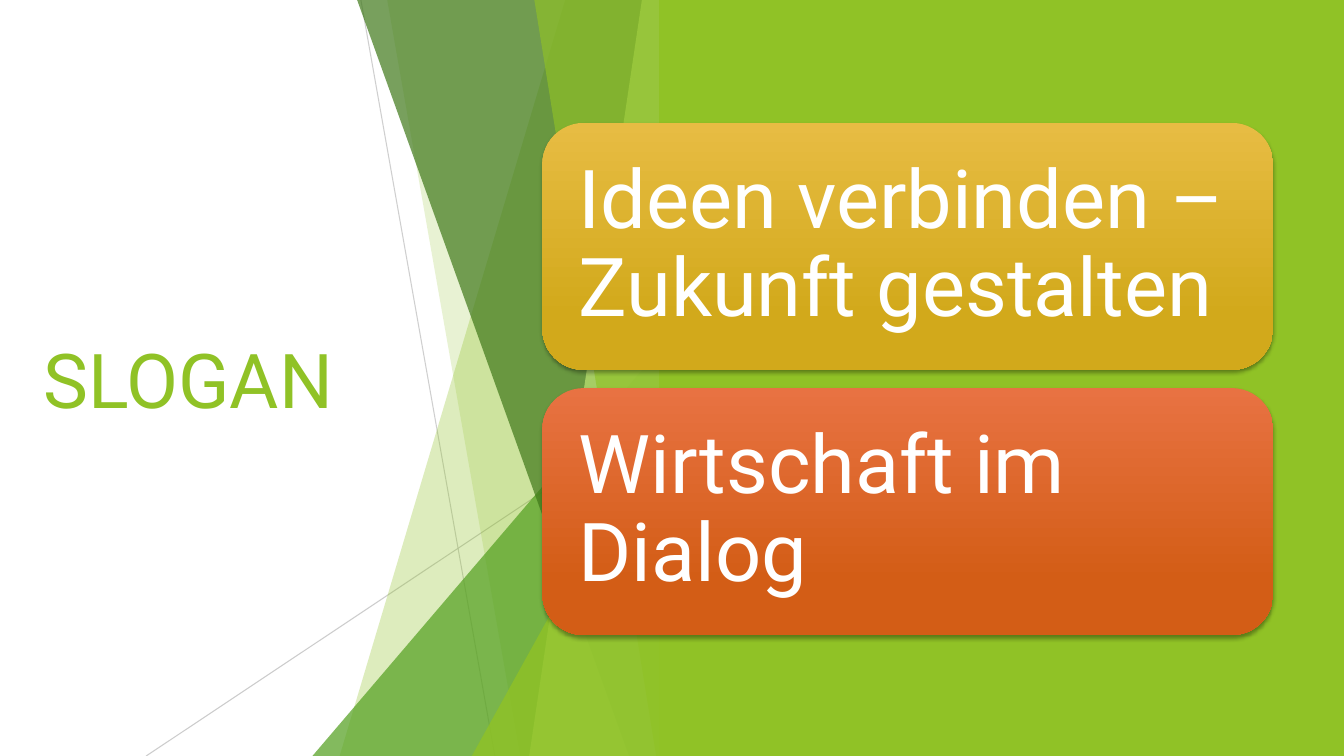
from dataclasses import dataclass

from lxml.etree import SubElement
from pptx import Presentation
from pptx.dml.color import RGBColor
from pptx.enum.shapes import MSO_CONNECTOR, MSO_SHAPE
from pptx.enum.text import MSO_ANCHOR, PP_ALIGN
from pptx.oxml.ns import qn
from pptx.slide import Slide
from pptx.text.text import TextFrame
from pptx.util import Pt


@dataclass(frozen=True)
class Theme:
    font: str = "Roboto"
    title_size: float = 54
    card_size: float = 58
    white: str = "FFFFFF"
    lime: str = "90C226"
    pale_lime: str = "C0E474"
    green: str = "54A021"
    forest: str = "3F7819"
    hairline: str = "BFBFBF"
    shadow: str = "000000"
    gold: tuple[str, str] = ("E7BC43", "D2A91B")
    orange: tuple[str, str] = ("E87242", "D35D16")


@dataclass(frozen=True)
class Ray:
    start: tuple[float, float]
    end: tuple[float, float]
    opacity: int


@dataclass(frozen=True)
class Facet:
    top_left: float
    bottom_left: float
    color: str
    opacity: int


@dataclass(frozen=True)
class Wedge:
    left: float
    top: float
    color: str
    opacity: int


@dataclass(frozen=True)
class Card:
    text: str
    gradient: tuple[str, str]


THEME = Theme()
PAGE_WIDTH, PAGE_HEIGHT = 960, 540
FACET_TOP, FACET_RIGHT = -0.6, 479.5
PANEL_LEFT = 470.9
CARD_LEFT, CARD_TOP, CARD_WIDTH, CARD_HEIGHT, CARD_GAP = 387.4, 87.8, 522, 176.4, 13
CARD_INSET = 17.28

RAYS = [
    Ray((257.8, 0), (353.5, 540), 75),
    Ray((479.5, 290.2), (104.4, 540), 80),
]
FACETS = [
    Facet(403.9, 242.6, THEME.lime, 30),
    Facet(276.5, 371.5, THEME.lime, 20),
    Wedge(223.2, 239.8, THEME.green, 72),
    Facet(254.9, 449.3, THEME.forest, 70),
    Facet(458.6, 378, THEME.pale_lime, 70),
    Facet(381.6, 468.7, THEME.lime, 65),
    Wedge(337, 283, THEME.lime, 80),
]
CARDS = [
    Card("Ideen verbinden – Zukunft gestalten", THEME.gold),
    Card("Wirtschaft im Dialog", THEME.orange),
]


def set_opacity(properties, percent: int) -> None:
    color = next(properties.iter(qn("a:srgbClr")))
    SubElement(color, qn("a:alpha"), val=str(percent * 1000))


def paint(shape, color: str, opacity: int = 100) -> None:
    shape.shadow.inherit = False
    shape.line.fill.background()
    shape.fill.solid()
    shape.fill.fore_color.rgb = RGBColor.from_string(color)
    if opacity < 100:
        set_opacity(shape.fill._xPr, opacity)


def write(frame: TextFrame, text: str, size: float, color: str, spacing: float = 1.0) -> None:
    frame.word_wrap = True
    frame.vertical_anchor = MSO_ANCHOR.MIDDLE
    para = frame.paragraphs[0]
    para.alignment = PP_ALIGN.LEFT
    para.line_spacing = spacing
    span = para.add_run()
    span.text = text
    span.font.name = THEME.font
    span.font.size = Pt(size)
    span.font.color.rgb = RGBColor.from_string(color)


def draw_ray(page: Slide, ray: Ray) -> None:
    points = [Pt(value) for value in (*ray.start, *ray.end)]
    line = page.shapes.add_connector(MSO_CONNECTOR.STRAIGHT, *points)
    line.line.width = Pt(0.75)
    line.line.color.rgb = RGBColor.from_string(THEME.hairline)
    properties = line._element.spPr
    set_opacity(properties, ray.opacity)
    SubElement(properties, qn("a:effectLst"))


def draw_facet(page: Slide, facet: Facet) -> None:
    builder = page.shapes.build_freeform(Pt(facet.top_left), Pt(FACET_TOP))
    corners = [
        (FACET_RIGHT, FACET_TOP),
        (FACET_RIGHT, PAGE_HEIGHT),
        (facet.bottom_left, PAGE_HEIGHT),
    ]
    builder.add_line_segments([(Pt(x), Pt(y)) for x, y in corners], close=True)
    paint(builder.convert_to_shape(), facet.color, facet.opacity)


def draw_wedge(page: Slide, wedge: Wedge) -> None:
    triangle = page.shapes.add_shape(
        MSO_SHAPE.ISOSCELES_TRIANGLE,
        Pt(wedge.left),
        Pt(wedge.top),
        Pt(FACET_RIGHT - wedge.left),
        Pt(PAGE_HEIGHT - wedge.top),
    )
    triangle.adjustments[0] = 1
    paint(triangle, wedge.color, wedge.opacity)


def draw_panel(page: Slide) -> None:
    panel = page.shapes.add_shape(
        MSO_SHAPE.RECTANGLE, Pt(PANEL_LEFT), 0, Pt(PAGE_WIDTH - PANEL_LEFT), Pt(PAGE_HEIGHT)
    )
    paint(panel, THEME.lime)


def draw_title(page: Slide) -> None:
    box = page.shapes.add_textbox(Pt(23.8), Pt(108.7), Pt(306.7), Pt(322.6))
    write(box.text_frame, "SLOGAN", THEME.title_size, THEME.lime)


def draw_card(page: Slide, card: Card, top: float) -> None:
    box = page.shapes.add_shape(
        MSO_SHAPE.ROUNDED_RECTANGLE, Pt(CARD_LEFT), Pt(top), Pt(CARD_WIDTH), Pt(CARD_HEIGHT)
    )
    box.line.fill.background()
    box.fill.gradient()
    box.fill.gradient_angle = 270
    for stop, color, position in zip(box.fill.gradient_stops, card.gradient, (0, 0.78)):
        stop.color.rgb = RGBColor.from_string(color)
        stop.position = position

    box.shadow.inherit = False
    effects = box._element.spPr.find(qn("a:effectLst"))
    shadow = SubElement(
        effects,
        qn("a:outerShdw"),
        blurRad=str(Pt(3)),
        dist=str(Pt(2)),
        dir="5400000",
        rotWithShape="0",
    )
    SubElement(shadow, qn("a:srgbClr"), val=THEME.shadow)
    set_opacity(shadow, 35)

    frame = box.text_frame
    frame.margin_left = frame.margin_right = Pt(CARD_INSET)
    frame.margin_top = frame.margin_bottom = Pt(CARD_INSET)
    write(frame, card.text, THEME.card_size, THEME.white, 0.9)


def main() -> None:
    deck = Presentation()
    deck.slide_width, deck.slide_height = Pt(PAGE_WIDTH), Pt(PAGE_HEIGHT)
    page = deck.slides.add_slide(deck.slide_layouts[6])
    page.background.fill.solid()
    page.background.fill.fore_color.rgb = RGBColor.from_string(THEME.white)

    draw_title(page)
    for ray in RAYS:
        draw_ray(page, ray)
    for piece in FACETS:
        if isinstance(piece, Facet):
            draw_facet(page, piece)
        else:
            draw_wedge(page, piece)
    draw_panel(page)
    for index, card in enumerate(CARDS):
        draw_card(page, card, CARD_TOP + index * (CARD_HEIGHT + CARD_GAP))

    deck.save("out.pptx")


if __name__ == "__main__":
    main()
